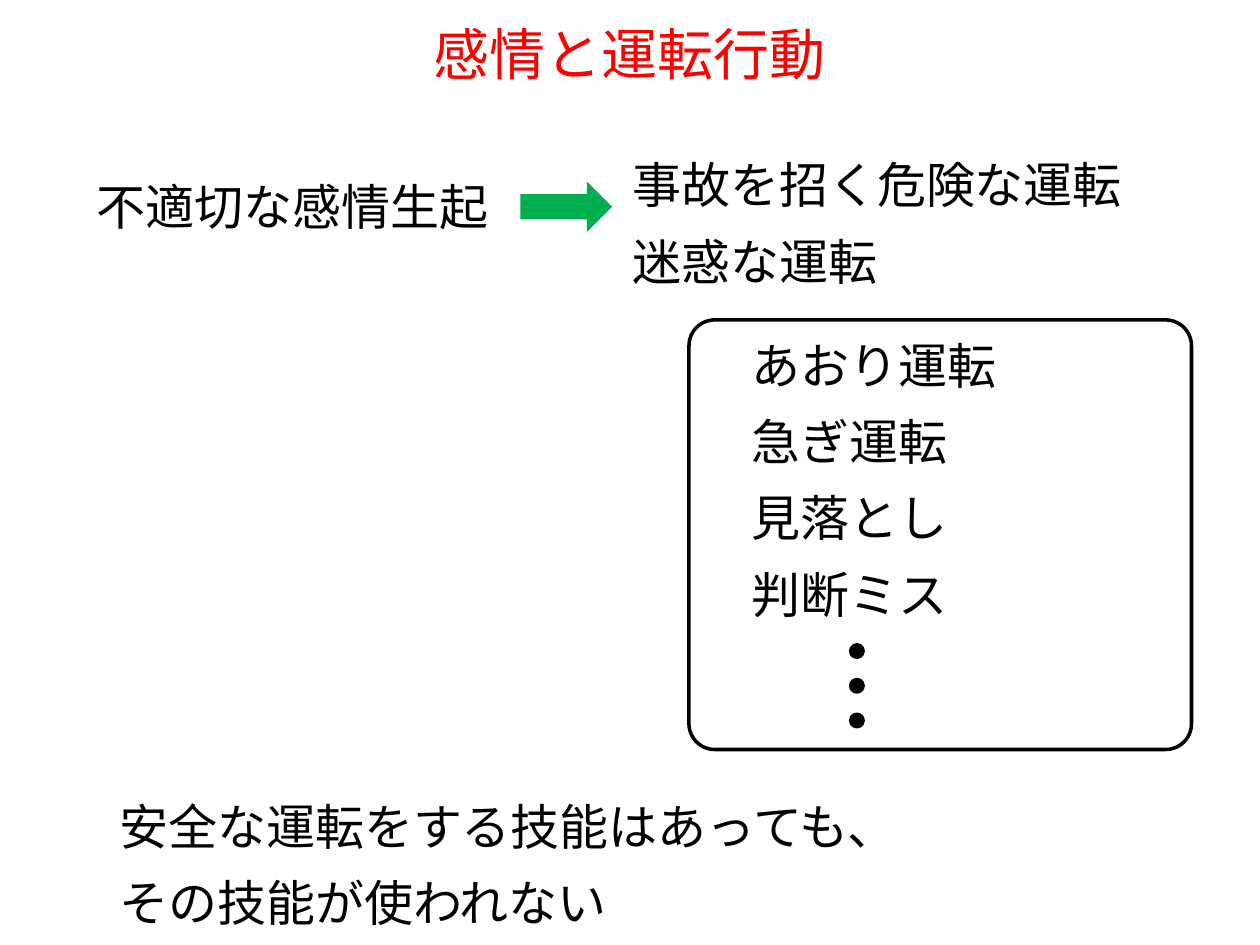
import pptx
import pptx.dml.color
import pptx.enum.shapes
import pptx.enum.text
import pptx.oxml.ns
import pptx.util
from lxml import etree

Cm = pptx.util.Cm
Pt = pptx.util.Pt
SHAPES = pptx.enum.shapes.MSO_SHAPE
ANCHOR = pptx.enum.text.MSO_ANCHOR
ALIGN = pptx.enum.text.PP_ALIGN
AUTO_SIZE = pptx.enum.text.MSO_AUTO_SIZE


def color(hex_value):
    return pptx.dml.color.RGBColor.from_string(hex_value)


def apply(target, values):
    for name, value in values.items():
        setattr(target, name, value)


class SlideBuilder:
    font = "Noto Sans CJK JP"
    black = "000000"
    red = "FF0000"
    green = "00B050"
    title_size = 32
    body_size = 28
    line_width = 2

    def __init__(self, slide):
        self.slide = slide

    def add_lines(self, frame, lines, size, hex_value, paragraph_format):
        for index, line in enumerate(lines):
            paragraph = frame.add_paragraph() if index else frame.paragraphs[0]
            apply(paragraph, paragraph_format)
            run = paragraph.add_run()
            run.text = line
            apply(run.font, {"size": Pt(size), "name": self.font})
            run.font.color.rgb = color(hex_value)
            # Japanese glyphs take the East Asian typeface
            properties = run.font._element
            etree.SubElement(properties, pptx.oxml.ns.qn("a:ea"), typeface=self.font)

    def title(self, text, left, top, width, height):
        shape = self.slide.shapes.title
        apply(shape, {"left": Cm(left), "top": Cm(top),
                      "width": Cm(width), "height": Cm(height)})
        apply(shape.text_frame, {"vertical_anchor": ANCHOR.MIDDLE, "word_wrap": True,
                                 "auto_size": AUTO_SIZE.NONE})
        self.add_lines(shape.text_frame, [text], self.title_size, self.red,
                       {"alignment": ALIGN.CENTER})

    def text(self, lines, left, top, width, height, wrap=False, spacing=1.0):
        shape = self.slide.shapes.add_textbox(Cm(left), Cm(top), Cm(width), Cm(height))
        apply(shape.text_frame, {"word_wrap": wrap,
                                 "auto_size": AUTO_SIZE.SHAPE_TO_FIT_TEXT})
        self.add_lines(shape.text_frame, lines, self.body_size, self.black,
                       {"alignment": ALIGN.LEFT, "line_spacing": spacing})

    def shape(self, kind, left, top, width, height, fill=None, line=None, parent=None):
        shapes = (parent or self.slide).shapes
        shape = shapes.add_shape(kind, Cm(left), Cm(top), Cm(width), Cm(height))
        shape.shadow.inherit = False
        if fill:
            shape.fill.solid()
            shape.fill.fore_color.rgb = color(fill)
        else:
            shape.fill.background()
        if line:
            shape.line.color.rgb = color(line)
            shape.line.width = Pt(self.line_width)
        else:
            shape.line.fill.background()
        return shape

    def vertical_dots(self, left, top, size, step, count):
        group = self.slide.shapes.add_group_shape()
        for index in range(count):
            self.shape(SHAPES.OVAL, left, top + index * step, size, size,
                       self.black, self.black, group)


def main():
    presentation = pptx.Presentation()
    apply(presentation, {"slide_width": Cm(25.4), "slide_height": Cm(19.05)})
    title_only = presentation.slide_layouts[5]
    builder = SlideBuilder(presentation.slides.add_slide(title_only))

    builder.title("感情と運転行動", 1.27, 0.25, 22.86, 1.63)

    # Cause, arrow and result
    builder.text(["不適切な感情生起"], 1.7, 3.43, 8.48, 1.45)
    builder.shape(SHAPES.RIGHT_ARROW, 10.49, 3.66, 1.85, 1.02, fill=builder.green)
    builder.text(["事故を招く危険な運転", "迷惑な運転"], 12.5, 2.64, 10.49, 3.15, spacing=1.3)

    # Framed list of examples
    frame = builder.shape(SHAPES.ROUNDED_RECTANGLE, 13.89, 6.45, 10.13, 8.66,
                          line=builder.black)
    frame.adjustments[0] = 0.06
    examples = ["あおり運転", "急ぎ運転", "見落とし", "判断ミス"]
    for index, example in enumerate(examples):
        width = 0.5 + len(example)
        builder.text([example], 14.91, 6.63 + index * 1.54, width, 1.45)
    builder.vertical_dots(17.15, 13.0, 0.25, 0.7, 3)

    # Conclusion
    builder.text(["安全な運転をする技能はあっても、", "その技能が使われない"],
                 2.16, 15.57, 21.87, 3.15, wrap=True, spacing=1.3)

    presentation.save("out.pptx")


if __name__ == "__main__":
    main()
